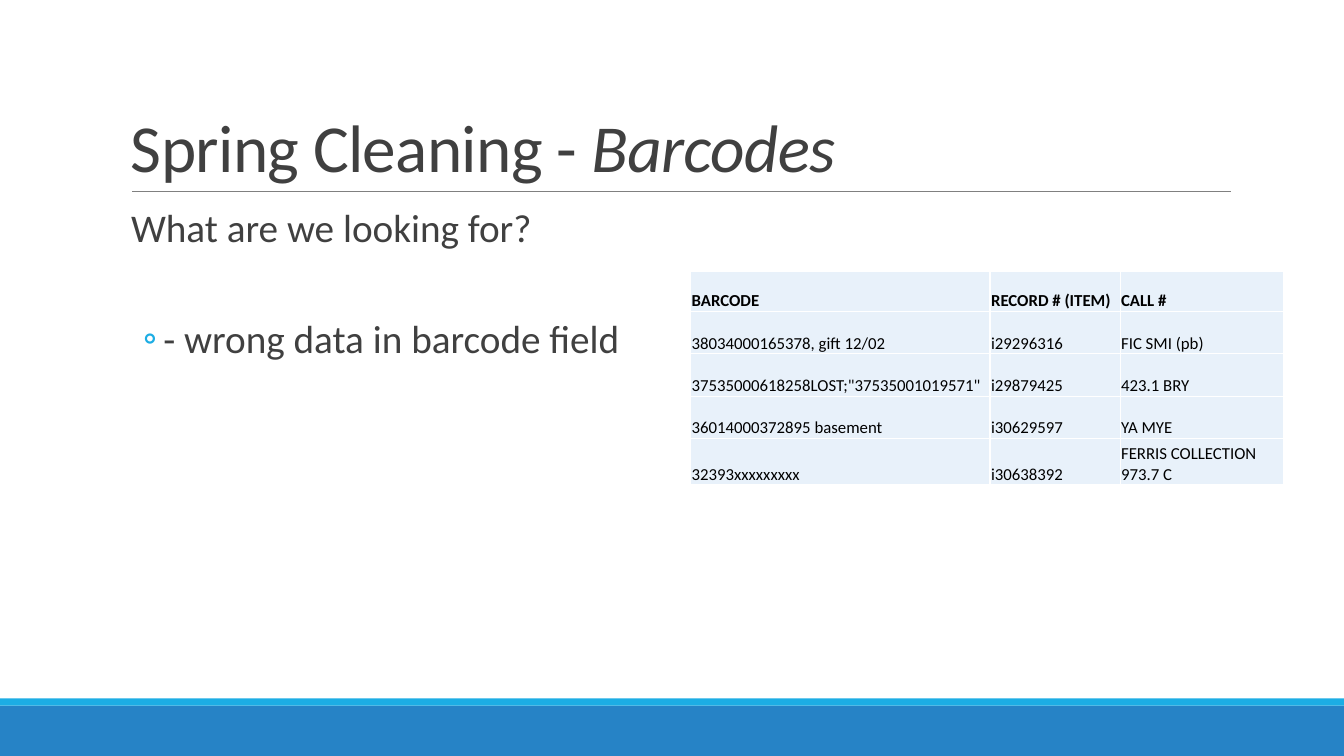
from dataclasses import dataclass, field
from typing import Any

from lxml.etree import SubElement
from pptx import Presentation
from pptx.dml.color import RGBColor as Color
from pptx.enum.shapes import MSO_CONNECTOR as Connector, MSO_SHAPE as Preset
from pptx.enum.text import MSO_ANCHOR as Anchor, MSO_AUTO_SIZE as AutoSize
from pptx.oxml.ns import qn
from pptx.util import Inches, Pt


@dataclass(frozen=True)
class Theme:
    font: str = "Calibri"
    text: str = "404040"
    cell_text: str = "000000"
    cell_fill: str = "E8F1FA"
    border: str = "FFFFFF"
    rule: str = "808080"
    accent: str = "1CADE4"
    footer: str = "2683C6"
    title_size: float = 48
    body_size: float = 28
    cell_size: float = 12


THEME = Theme()


@dataclass(frozen=True)
class Bar:
    top: float
    height: float
    color: str


@dataclass(frozen=True)
class Run:
    text: str
    size: float
    color: str = THEME.text
    format: dict[str, Any] = field(default_factory=dict)
    tracking: float = 0


@dataclass(frozen=True)
class Line:
    runs: list[Run]
    format: dict[str, Any]
    margin: float = 0
    indent: float = 0
    bullet: str = ""


@dataclass(frozen=True)
class TextBlock:
    place: tuple[float, float, float, float]
    lines: list[Line]
    format: dict[str, Any]


SLIDE_WIDTH, SLIDE_HEIGHT = 13.33, 7.5
BARS = [Bar(7, 0.5, THEME.footer), Bar(6.93, 0.07, THEME.accent)]

TITLE = TextBlock(
    (1.2, 0.31, 11, 1.59),
    [Line([Run("Spring Cleaning - ", THEME.title_size, tracking=-0.5),
           Run("Barcodes", THEME.title_size, format={"italic": True}, tracking=-0.5)],
          {"line_spacing": 0.85})],
    {"vertical_anchor": Anchor.BOTTOM},
)
BODY = TextBlock(
    (1.2, 2.02, 5.4, 4.4),
    [Line([Run("What are we looking for?", THEME.body_size)],
          {"line_spacing": 0.9, "space_before": Pt(12), "space_after": Pt(2)},
          margin=0.1),
     Line([Run("- wrong data in barcode field", THEME.body_size)],
          {"line_spacing": 0.9, "space_before": Pt(47), "space_after": Pt(4)},
          margin=0.42, indent=-0.2, bullet="◦")],
    {"vertical_anchor": Anchor.TOP, "margin_left": 0, "margin_right": 0},
)

TABLE_LEFT, TABLE_TOP = 6.85, 2.69
COLUMN_WIDTHS = [2.97, 1.29, 1.62]
ROW_HEIGHTS = [0.4, 0.42, 0.42, 0.42, 0.46]
RECORDS = [
    ("BARCODE", "RECORD # (ITEM)", "CALL #"),
    ("38034000165378, gift 12/02", "i29296316", "FIC SMI (pb)"),
    ('37535000618258LOST;"37535001019571"', "i29879425", "423.1 BRY"),
    ("36014000372895 basement", "i30629597", "YA MYE"),
    ("32393xxxxxxxxx", "i30638392", "FERRIS COLLECTION 973.7 C"),
]
CELL_FORMAT = {
    "vertical_anchor": Anchor.BOTTOM,
    "margin_left": Inches(0.01),
    "margin_right": Inches(0.01),
    "margin_top": Inches(0.01),
    "margin_bottom": 0,
}


def apply(target: Any, values: dict[str, Any]) -> None:
    for name, value in values.items():
        setattr(target, name, value)


def paint(fill: Any, color: str) -> None:
    fill.solid()
    fill.fore_color.rgb = Color.from_string(color)


def add_run(para: Any, run: Run) -> None:
    span = para.add_run()
    span.text = run.text
    apply(span.font, {"name": THEME.font, "size": Pt(run.size), **run.format})
    span.font.color.rgb = Color.from_string(run.color)
    if run.tracking:
        span._r.get_or_add_rPr().set("spc", str(round(run.tracking * 100)))


def add_line(para: Any, line: Line) -> None:
    apply(para, line.format)
    properties = para._p.get_or_add_pPr()
    properties.set("marL", str(Inches(line.margin)))
    properties.set("indent", str(Inches(line.indent)))
    if line.bullet:
        tint = SubElement(properties, qn("a:buClr"))
        SubElement(tint, qn("a:srgbClr"), val=THEME.accent)
        SubElement(properties, qn("a:buFont"), typeface=THEME.font)
        SubElement(properties, qn("a:buChar"), char=line.bullet)
    for run in line.runs:
        add_run(para, run)


def add_text(page: Any, block: TextBlock) -> None:
    frame = page.shapes.add_textbox(*map(Inches, block.place)).text_frame
    apply(frame, {"word_wrap": True, "auto_size": AutoSize.NONE, **block.format})
    for index, line in enumerate(block.lines):
        add_line(frame.add_paragraph() if index else frame.paragraphs[0], line)


def add_bar(page: Any, bar: Bar) -> None:
    box = page.shapes.add_shape(
        Preset.RECTANGLE, 0, Inches(bar.top), Inches(SLIDE_WIDTH), Inches(bar.height))
    box.shadow.inherit = False
    paint(box.fill, bar.color)
    box.line.fill.background()


def add_rule(page: Any) -> None:
    rule = page.shapes.add_connector(
        Connector.STRAIGHT, *map(Inches, (1.31, 1.9, 12.21, 1.9)))
    rule.line.width = Pt(0.5)
    rule.line.color.rgb = Color.from_string(THEME.rule)
    SubElement(rule._element.spPr, qn("a:effectLst"))


def add_borders(cell: Any) -> None:
    properties = cell._tc.get_or_add_tcPr()
    for side in ("lnL", "lnR", "lnT", "lnB"):
        edge = SubElement(properties, qn(f"a:{side}"), w=str(Pt(1)))
        fill = SubElement(edge, qn("a:solidFill"))
        SubElement(fill, qn("a:srgbClr"), val=THEME.border)


def add_records(page: Any) -> None:
    table = page.shapes.add_table(
        len(RECORDS), len(COLUMN_WIDTHS), Inches(TABLE_LEFT), Inches(TABLE_TOP),
        Inches(sum(COLUMN_WIDTHS)), Inches(sum(ROW_HEIGHTS))).table
    apply(table, {"first_row": False, "horz_banding": False})
    for column, width in zip(table.columns, COLUMN_WIDTHS):
        column.width = Inches(width)
    for index, (row, height, record) in enumerate(zip(table.rows, ROW_HEIGHTS, RECORDS)):
        row.height = Inches(height)
        for cell, text in zip(row.cells, record):
            apply(cell, CELL_FORMAT)
            add_borders(cell)
            paint(cell.fill, THEME.cell_fill)
            add_run(cell.text_frame.paragraphs[0],
                    Run(text, THEME.cell_size, THEME.cell_text, {"bold": index == 0}))


def main() -> None:
    deck = Presentation()
    apply(deck, {"slide_width": Inches(SLIDE_WIDTH), "slide_height": Inches(SLIDE_HEIGHT)})
    page = deck.slides.add_slide(deck.slide_layouts[6])
    for bar in BARS:
        add_bar(page, bar)
    add_rule(page)
    for block in (TITLE, BODY):
        add_text(page, block)
    add_records(page)
    deck.save("out.pptx")


if __name__ == "__main__":
    main()
